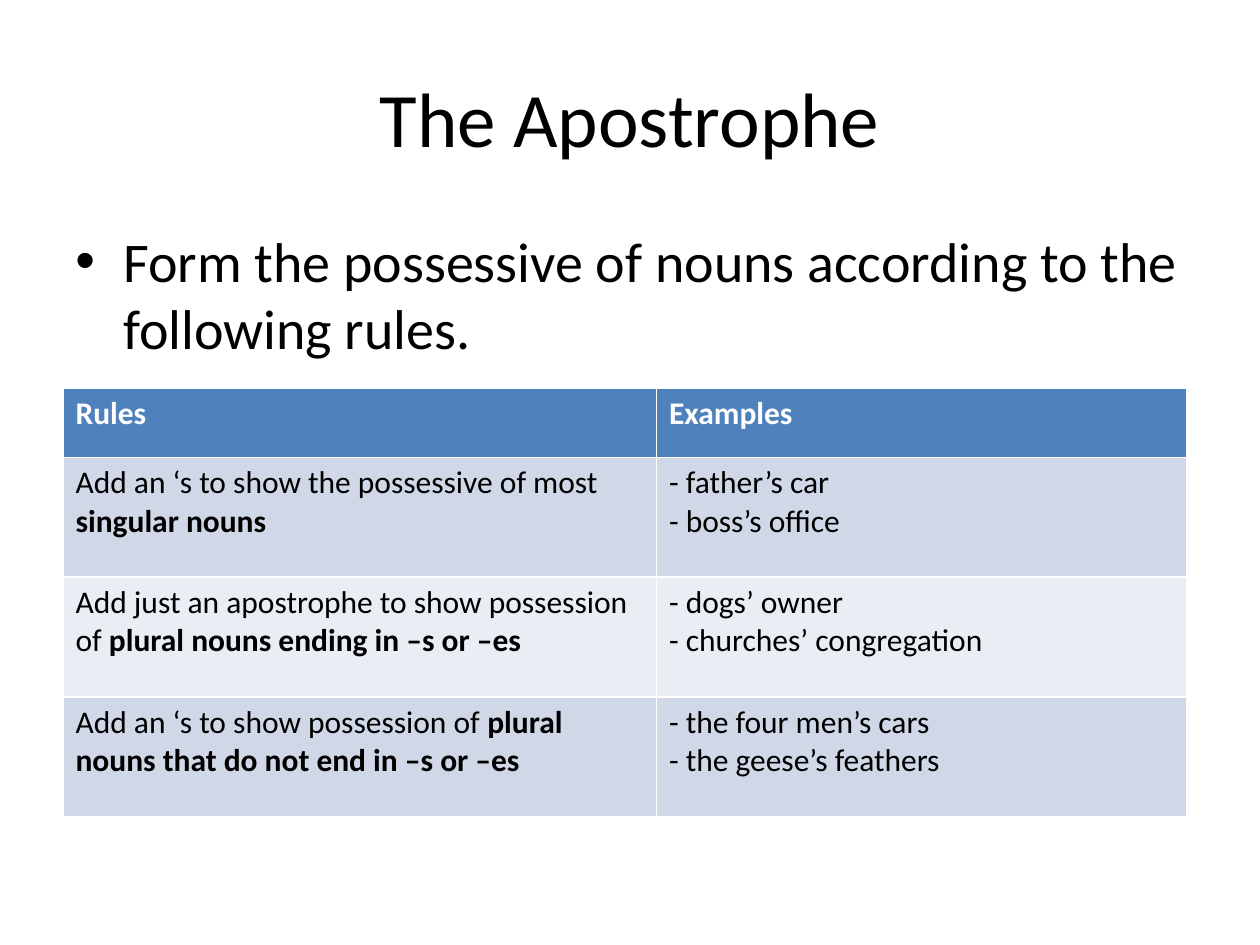
from lxml import etree
from pptx import Presentation
from pptx.dml.color import RGBColor
from pptx.enum import text as t
from pptx.oxml import ns
from pptx.util import Inches, Pt

TITLE = "The Apostrophe"
INTRO = "Form the possessive of nouns according to the following rules."
HEADS = ["Rules", "Examples"]
# plain start of the rule, bold end of the rule, examples
RULES = [
    ("Add an ‘s to show the possessive of most ", "singular nouns",
     ["father’s car", "boss’s office"]),
    ("Add just an apostrophe to show possession of ",
     "plural nouns ending in –s or –es",
     ["dogs’ owner", "churches’ congregation"]),
    ("Add an ‘s to show possession of ",
     "plural nouns that do not end in –s or –es",
     ["the four men’s cars", "the geese’s feathers"]),
]
WIDTHS = [4.71, 4.21]
HEAD_H, RULE_H = 0.55, 0.95
BLUE, BANDS = "4F81BD", ["D0D8E8", "E9EDF4"]
BLACK, WHITE = "000000", "FFFFFF"


def color(code):
    return RGBColor.from_string(code)


def write(para, words, size, code=BLACK, bold=False):
    para.text = words
    font = para.font
    font.name, font.size, font.bold = "Calibri", Pt(size), bold
    font.color.rgb = color(code)


def add_text(slide, box, words, size, anchor):
    frame = slide.shapes.add_textbox(*map(Inches, box)).text_frame
    frame.word_wrap = True
    frame.vertical_anchor = anchor
    para = frame.paragraphs[0]
    write(para, words, size)
    return para


def add_bullet(para):
    """Hang a bullet, with space before of 20 percent."""
    props = para._p.get_or_add_pPr()
    props.set("marL", str(Inches(0.38)))
    props.set("indent", str(-Inches(0.38)))
    space = etree.Element(ns.qn("a:spcBef"))
    etree.SubElement(space, ns.qn("a:spcPct"), val="20000")
    font = etree.Element(ns.qn("a:buFont"), typeface="Arial")
    mark = etree.Element(ns.qn("a:buChar"), char="•")
    for place, item in enumerate([space, font, mark]):
        props.insert(place, item)


def fill_cell(cell, fill, words, code=BLACK, bold=False):
    cell.fill.solid()
    cell.fill.fore_color.rgb = color(fill)
    para = cell.text_frame.paragraphs[0]
    write(para, words, 18, code, bold)
    return para


def add_rules(slide):
    high = HEAD_H + RULE_H * len(RULES)
    box = (0.5, 3.08, sum(WIDTHS), high)
    table = slide.shapes.add_table(
        len(RULES) + 1, len(HEADS), *map(Inches, box)).table
    for col, wide in zip(table.columns, WIDTHS):
        col.width = Inches(wide)
    for num, row in enumerate(table.rows):
        row.height = Inches(RULE_H if num else HEAD_H)
    for col, head in enumerate(HEADS):
        fill_cell(table.cell(0, col), BLUE, head, WHITE, True)
    for num, (start, end, cases) in enumerate(RULES):
        band = BANDS[num % 2]
        para = fill_cell(table.cell(num + 1, 0), band, start)
        run = para.add_run()
        run.text, run.font.bold = end, True
        lines = "\n".join(f"- {case}" for case in cases)
        fill_cell(table.cell(num + 1, 1), band, lines)


def main():
    deck = Presentation()
    deck.slide_width, deck.slide_height = Inches(10), Inches(7.5)
    slide = deck.slides.add_slide(deck.slide_layouts[6])
    title = add_text(slide, (0.5, 0.3, 9, 1.25), TITLE, 44,
                     t.MSO_ANCHOR.MIDDLE)
    title.alignment = t.PP_ALIGN.CENTER
    add_bullet(add_text(slide, (0.5, 1.75, 9, 4.95), INTRO, 32,
                        t.MSO_ANCHOR.TOP))
    add_rules(slide)
    deck.save("out.pptx")


if __name__ == "__main__":
    main()
